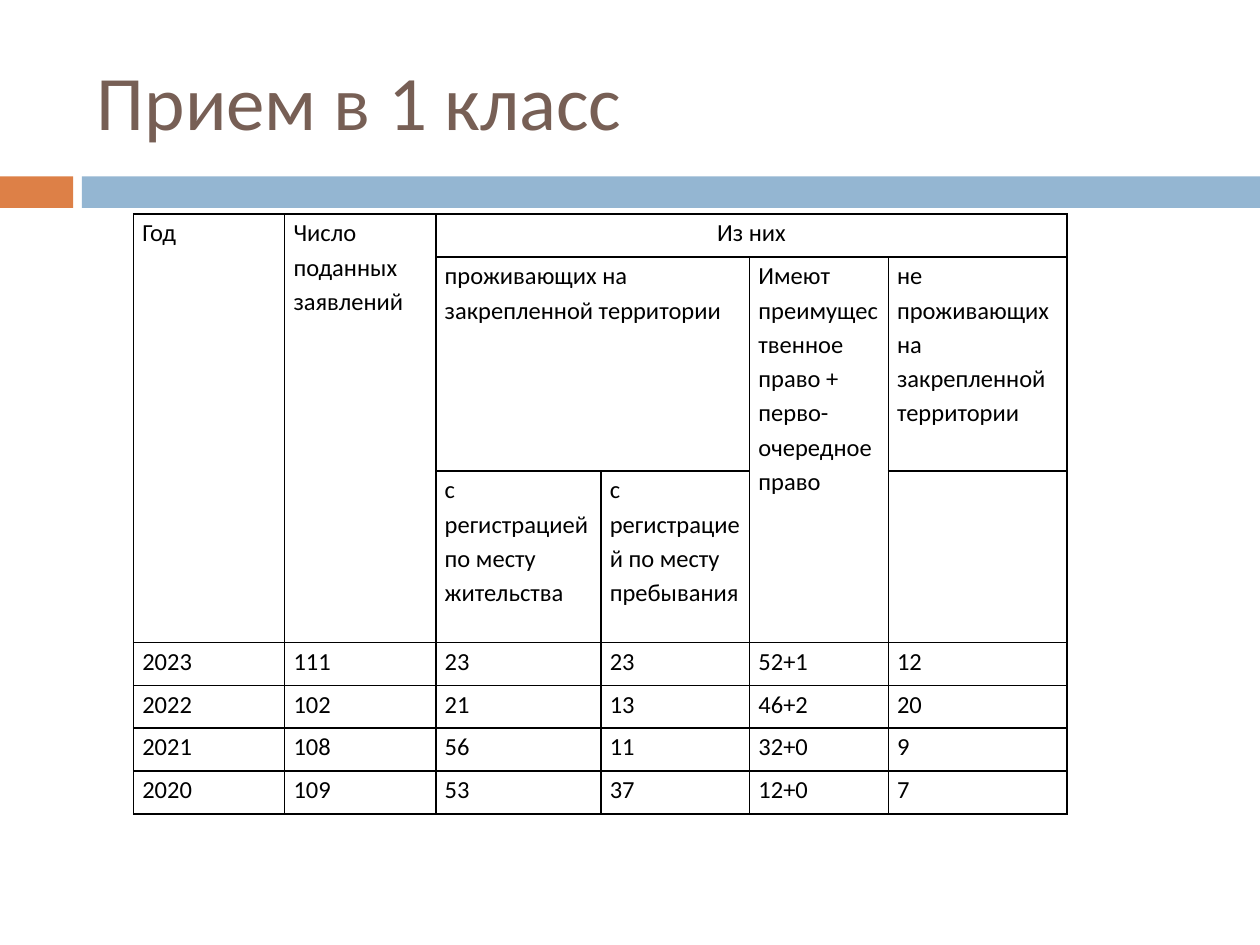
from dataclasses import dataclass

from lxml.etree import SubElement
from pptx import Presentation
from pptx.dml.color import RGBColor
from pptx.enum.shapes import MSO_SHAPE
from pptx.enum.text import MSO_ANCHOR, PP_ALIGN as Align
from pptx.oxml import parse_xml
from pptx.oxml.ns import nsdecls, qn
from pptx.util import Inches, Pt

COLORS = {"orange": "DD8047", "blue": "94B6D2", "title": "775F55", "ink": "000000"}
FONT = "Calibri"


@dataclass(frozen=True)
class Band:
    left: float
    width: float
    color: str


@dataclass(frozen=True)
class Heading:
    row: int
    col: int
    text: str = ""
    rows: int = 1
    cols: int = 1
    align: Align = Align.LEFT


BANDS = [Band(0, 0.58, "orange"), Band(0.65, 9.35, "blue")]
COLUMN_WIDTHS = [1.2, 1.2, 1.31, 1.18, 1.1, 1.42]
ROW_HEIGHTS = [0.34, 1.7, 1.36] + [0.34] * 4
HEADINGS = [
    Heading(0, 0, "Год", rows=3, align=Align.JUSTIFY),
    Heading(0, 1, "Число поданных заявлений", rows=3),
    Heading(0, 2, "Из них", cols=4, align=Align.CENTER),
    Heading(1, 2, "проживающих на закрепленной территории", cols=2),
    Heading(1, 4, "Имеют преимущественное право + перво-очередное\nправо", rows=2),
    Heading(1, 5, "не проживающих на закрепленной территории"),
    Heading(2, 2, "с регистрацией по месту жительства"),
    Heading(2, 3, "с регистрацией по месту пребывания"),
]
ADMISSIONS = [
    ("2023", "111", "23", "23", "52+1", "12"),
    ("2022", "102", "21", "13", "46+2", "20"),
    ("2021", "108", "56", "11", "32+0", "9"),
    ("2020", "109", "53", "37", "12+0", "7"),
]


def rgb(name: str) -> RGBColor:
    return RGBColor.from_string(COLORS[name])


def write_text(frame, text: str, *, size: float, color: str = "ink",
               align: Align = Align.LEFT, spacing: float = 1.0) -> None:
    frame.word_wrap = True
    frame.text = text
    for paragraph in frame.paragraphs:
        paragraph.alignment = align
        paragraph.line_spacing = spacing
        for run in paragraph.runs:
            run.font.name = FONT
            run.font.size = Pt(size)
            run.font.color.rgb = rgb(color)


def draw_band(slide, band: Band) -> None:
    bar = slide.shapes.add_shape(MSO_SHAPE.RECTANGLE, Inches(band.left), Inches(1.4),
                                 Inches(band.width), Inches(0.25))
    bar.shadow.inherit = False
    bar.fill.solid()
    bar.fill.fore_color.rgb = rgb(band.color)
    bar.line.fill.background()


def draw_title(slide, text: str) -> None:
    title = slide.shapes.add_textbox(Inches(0.67), Inches(0.25), Inches(8.92), Inches(1.08))
    title.text_frame.vertical_anchor = MSO_ANCHOR.MIDDLE
    write_text(title.text_frame, text, size=44, color="title")


def style_cell(cell) -> None:
    """Clear the fill, set the margins and draw a thin line on every side."""
    cell.margin_left = cell.margin_right = Inches(0.07)
    cell.margin_top = cell.margin_bottom = 0
    cell.fill.background()
    properties = cell._tc.get_or_add_tcPr()
    for position, side in enumerate(("lnL", "lnR", "lnT", "lnB")):
        line = parse_xml(f'<a:{side} {nsdecls("a")} w="{Pt(1)}"/>')
        fill = SubElement(line, qn("a:solidFill"))
        SubElement(fill, qn("a:srgbClr"), val=COLORS["ink"])
        properties.insert(position, line)


def draw_admissions_table(slide) -> None:
    table = slide.shapes.add_table(
        len(ROW_HEIGHTS), len(COLUMN_WIDTHS), Inches(1.06), Inches(1.7),
        Inches(sum(COLUMN_WIDTHS)), Inches(sum(ROW_HEIGHTS))).table
    table.first_row = table.horz_banding = False
    for column, width in zip(table.columns, COLUMN_WIDTHS):
        column.width = Inches(width)
    for row, height in zip(table.rows, ROW_HEIGHTS):
        row.height = Inches(height)
    for cell in table.iter_cells():
        style_cell(cell)

    first_year_row = len(ROW_HEIGHTS) - len(ADMISSIONS)
    figures = [Heading(row, col, value)
               for row, values in enumerate(ADMISSIONS, first_year_row)
               for col, value in enumerate(values)]
    for entry in HEADINGS + figures:
        cell = table.cell(entry.row, entry.col)
        if entry.rows > 1 or entry.cols > 1:
            cell.merge(table.cell(entry.row + entry.rows - 1, entry.col + entry.cols - 1))
        write_text(cell.text_frame, entry.text, size=14, align=entry.align, spacing=1.15)


def main() -> None:
    deck = Presentation()
    deck.slide_width, deck.slide_height = Inches(10), Inches(7.5)
    slide = deck.slides.add_slide(deck.slide_layouts[6])
    for band in BANDS:
        draw_band(slide, band)
    draw_title(slide, "Прием в 1 класс")
    draw_admissions_table(slide)
    deck.save("out.pptx")


if __name__ == "__main__":
    main()
